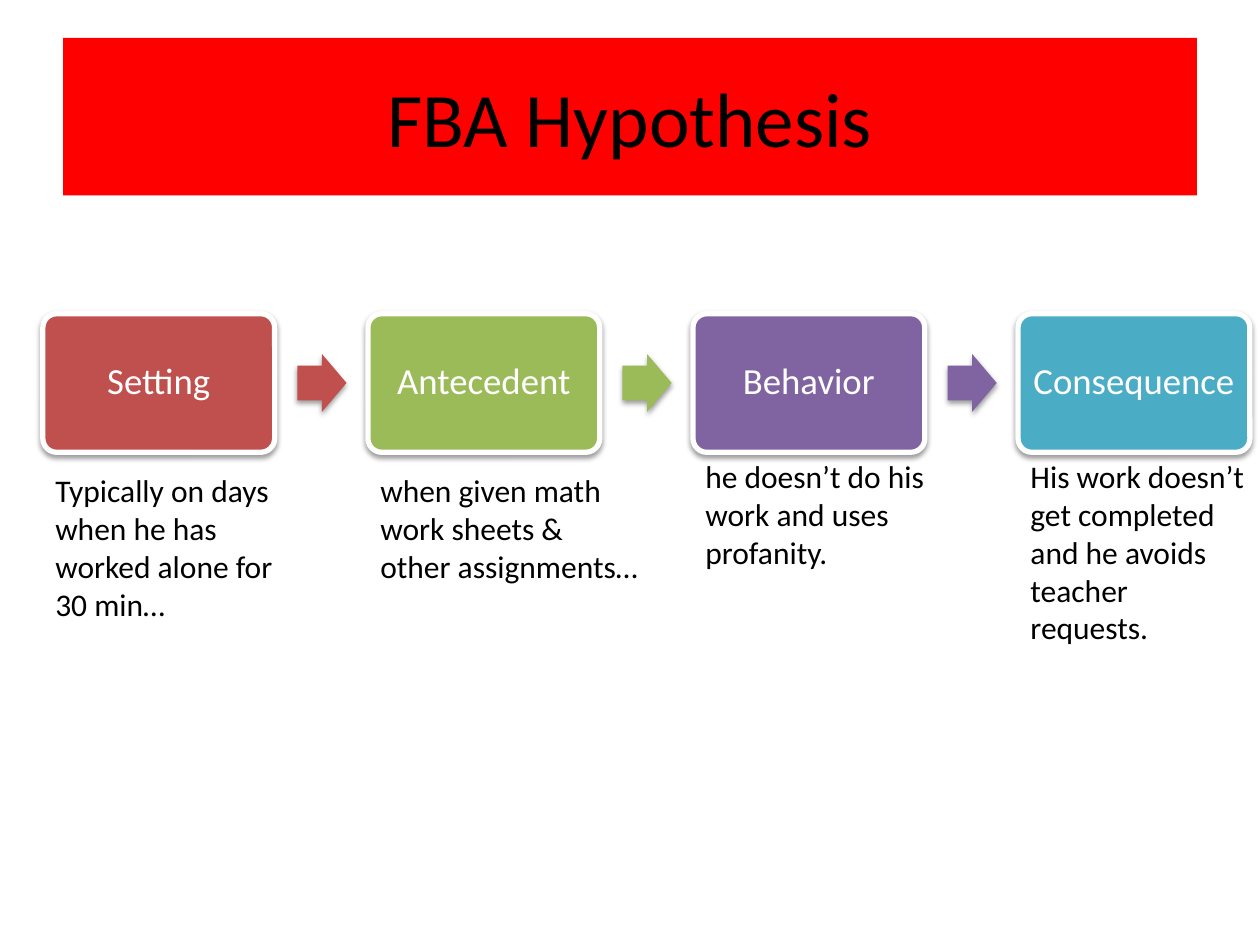
from lxml.etree import SubElement
from pptx import Presentation
from pptx.dml.color import RGBColor
from pptx.enum.shapes import MSO_SHAPE
from pptx.enum.text import MSO_ANCHOR, MSO_AUTO_SIZE, PP_ALIGN
from pptx.oxml.ns import qn
from pptx.util import Inches, Pt

COLORS = {
    "banner": "FF0000", "black": "000000", "white": "FFFFFF",
    "setting": "C0504D", "antecedent": "9BBB59",
    "behavior": "8064A2", "consequence": "4BACC6",
}
STEPS = [  # label, detail, detail top, width and height
    ("Setting", "Typically on days when he has worked alone for 30 min…", 3.69, 2.08, 1.31),
    ("Antecedent", "when given math work sheets & other assignments…", 3.69, 2.25, 1.01),
    ("Behavior", "he doesn’t do his work and uses profanity.", 3.58, 1.94, 1.01),
    ("Consequence", "His work doesn’t get completed and he avoids teacher requests.", 3.58, 1.92, 1.62),
]
LEFT, PITCH = 0.34, 2.58


def write(frame, text, size, color, align):
    frame.word_wrap = True
    paragraph = frame.paragraphs[0]
    paragraph.text = text
    paragraph.alignment = align
    font = paragraph.font
    for name, value in {"name": "Calibri", "size": Pt(size)}.items():
        setattr(font, name, value)
    font.color.rgb = RGBColor.from_string(COLORS[color])
    return paragraph


def add_block(kind, left, top, width, height, color, adjustments):
    """Add a filled shape with a soft shadow falling straight down."""
    block = slide.shapes.add_shape(
        kind, Inches(left), Inches(top), Inches(width), Inches(height))
    for index, value in enumerate(adjustments):
        block.adjustments[index] = value
    block.fill.solid()
    block.fill.fore_color.rgb = RGBColor.from_string(COLORS[color])
    block.line.fill.background()
    block.shadow.inherit = False
    effects = block._element.spPr.find(qn("a:effectLst"))
    shadow = SubElement(effects, qn("a:outerShdw"), blurRad=str(Pt(3.1)),
                        dist=str(Pt(1.6)), dir="5400000", rotWithShape="0")
    shade = SubElement(shadow, qn("a:srgbClr"), val=COLORS["black"])
    SubElement(shade, qn("a:alpha"), val="38000")
    return block


prs = Presentation()
prs.slide_width, prs.slide_height = Inches(10), Inches(7.5)
slide = prs.slides.add_slide(prs.slide_layouts[5])

title = slide.shapes.title
title.left, title.top = Inches(0.5), Inches(0.3)
title.width, title.height = Inches(9), Inches(1.25)
title.fill.solid()
title.fill.fore_color.rgb = RGBColor.from_string(COLORS["banner"])
title.text_frame.vertical_anchor = MSO_ANCHOR.MIDDLE
write(title.text_frame, "FBA Hypothesis", 44, "black", PP_ALIGN.CENTER)

for number, (label, detail, top, width, height) in enumerate(STEPS):
    left = LEFT + number * PITCH
    color = label.lower()

    step = add_block(MSO_SHAPE.ROUNDED_RECTANGLE, left, 2.49, 1.84, 1.1, color, [0.1])
    step.line.color.rgb = RGBColor.from_string(COLORS["white"])
    step.line.width = Pt(3)
    frame = step.text_frame
    frame.vertical_anchor = MSO_ANCHOR.MIDDLE
    for side in ("left", "top", "right", "bottom"):
        setattr(frame, f"margin_{side}", Inches(0.08))
    write(frame, label, 21, "white", PP_ALIGN.CENTER).line_spacing = 0.9

    if number < len(STEPS) - 1:
        add_block(MSO_SHAPE.RIGHT_ARROW, left + 2.02, 2.81, 0.39, 0.46, color, [0.6, 0.5])

    caption = slide.shapes.add_textbox(
        Inches(left), Inches(top), Inches(width), Inches(height))
    write(caption.text_frame, detail, 18, "black", PP_ALIGN.LEFT)
    caption.text_frame.auto_size = MSO_AUTO_SIZE.SHAPE_TO_FIT_TEXT

prs.save("out.pptx")
